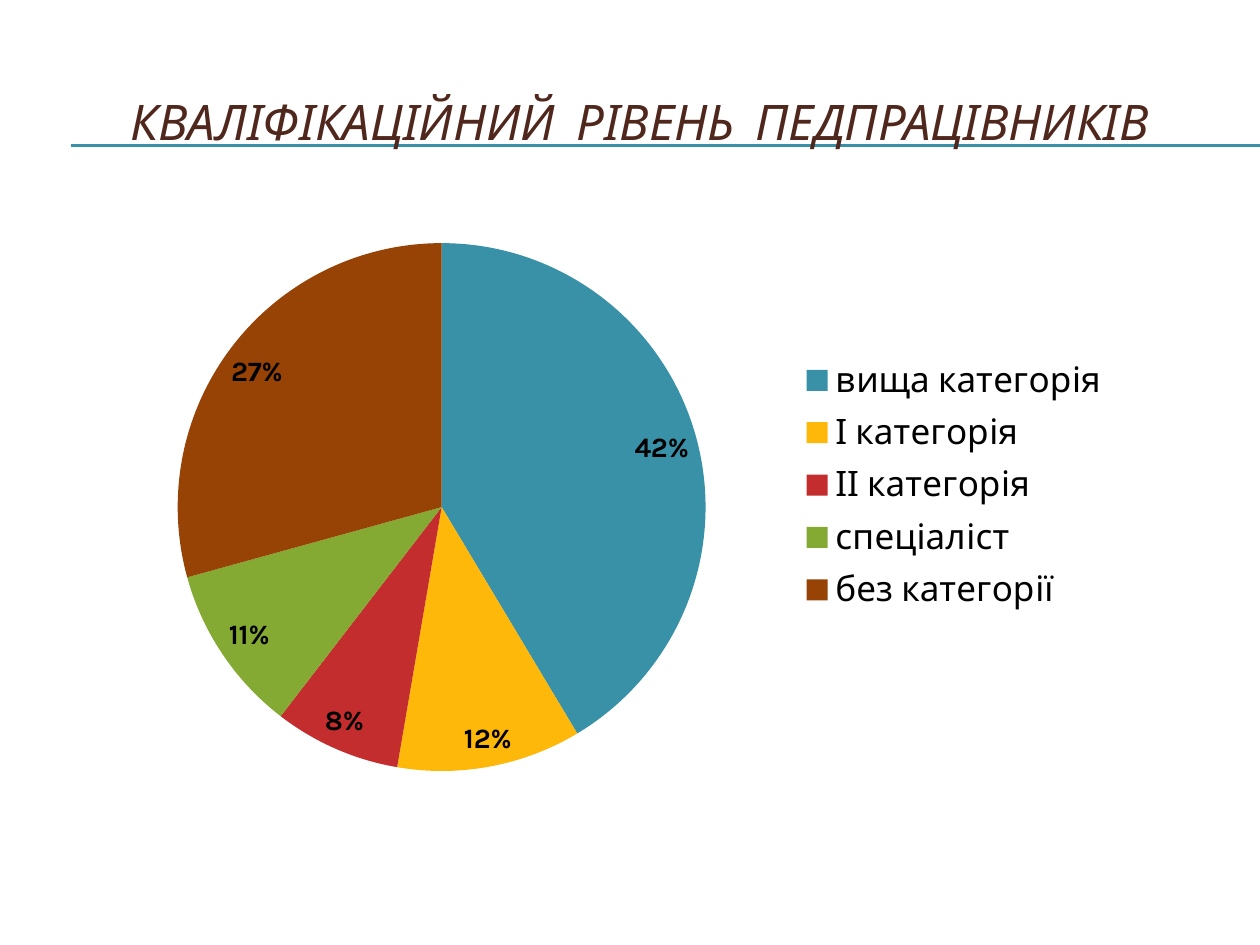
from lxml import etree
from pptx import Presentation
from pptx.chart.data import CategoryChartData
from pptx.dml.color import RGBColor
from pptx.enum import chart as ch, shapes, text
from pptx.oxml.ns import qn
from pptx.util import Inches, Pt

FONT = "Karla"
COLORS = {"rule": "3891A7", "title": "4F271C", "text": "000000"}
CHART_W, CHART_H = 8.2, 4.69
LEVELS = [
    ("вища категорія", 246, "42%", "3891A7", (0, -0.05)),
    ("І категорія", 67, "12%", "FEB80A", (0.18, -0.03)),
    ("ІІ категорія", 46, "8%", "C32D2E", (-0.11, -0.04)),
    ("спеціаліст", 61, "11%", "84AA33", (0, 0.01)),
    ("без категорії", 174, "27%", "964305", (-0.05, 0.04)),
]


def style(font, size, color, bold=False, italic=False):
    font.name = FONT
    font.size = Pt(size)
    font.bold = bold
    font.italic = italic
    font.color.rgb = RGBColor.from_string(color)


def place(parent, index, modes, x, y, w=None, h=None):
    for old in parent.findall(qn("c:layout")):
        parent.remove(old)
    layout = etree.Element(qn("c:layout"))
    manual = etree.SubElement(layout, qn("c:manualLayout"))
    for tag, value in modes:
        etree.SubElement(manual, qn(f"c:{tag}")).set("val", value)
    for tag, length, whole in (("x", x, CHART_W), ("y", y, CHART_H),
                               ("w", w, CHART_W), ("h", h, CHART_H)):
        if length is not None:
            etree.SubElement(manual, qn(f"c:{tag}")).set("val", f"{length / whole:.4f}")
    parent.insert(index, layout)


prs = Presentation()
prs.slide_width, prs.slide_height = Inches(10), Inches(7.5)
slide = prs.slides.add_slide(prs.slide_layouts[5])

heading = slide.shapes.title
heading.left, heading.top = Inches(0.33), Inches(0.5)
heading.width, heading.height = Inches(9.5), Inches(0.92)
frame = heading.text_frame
frame.text = "КВАЛІФІКАЦІЙНИЙ  РІВЕНЬ  ПЕДПРАЦІВНИКІВ"
frame.vertical_anchor = text.MSO_ANCHOR.MIDDLE
frame.auto_size = text.MSO_AUTO_SIZE.NONE
frame.paragraphs[0].alignment = text.PP_ALIGN.CENTER
style(frame.paragraphs[0].font, 28, COLORS["title"], italic=True)

for y in (1.15, 1.16):
    rule = slide.shapes.add_connector(
        shapes.MSO_CONNECTOR.STRAIGHT, Inches(0.56), Inches(y), Inches(10), Inches(y))
    rule.line.color.rgb = RGBColor.from_string(COLORS["rule"])
    rule.line.width = Pt(0.75)
    etree.SubElement(rule._element.spPr, qn("a:effectLst"))
    heading._element.addprevious(rule._element)

staff = CategoryChartData()
staff.categories = [name for name, *_ in LEVELS]
staff.add_series("Series 1", [count for _, count, *_ in LEVELS])
pie = slide.shapes.add_chart(
    ch.XL_CHART_TYPE.PIE, Inches(0.7), Inches(1.8),
    Inches(CHART_W), Inches(CHART_H), staff).chart
style(pie.font, 16, COLORS["text"])
pie.has_title = False
pie.has_legend = True
pie.legend.position = ch.XL_LEGEND_POSITION.RIGHT
pie.legend.include_in_layout = False
style(pie.legend.font, 20, COLORS["text"])

edges = [("xMode", "edge"), ("yMode", "edge")]
place(pie._chartSpace.chart.plotArea, 0, [("layoutTarget", "inner")] + edges,
      0.71, 0.13, 4.19, 4.19)
place(pie.legend._element, 1, edges, 5.62, 0.97, 2.5, 2.16)

pie.plots[0].vary_by_categories = True
levels = pie.plots[0].series[0]
shares = levels.data_labels
shares.show_value = True
shares.position = ch.XL_LABEL_POSITION.INSIDE_END
style(shares.font, 16, COLORS["text"], bold=True)

for i, (_, _, share, color, shift) in enumerate(LEVELS):
    point = levels.points[i]
    point.format.fill.solid()
    point.format.fill.fore_color.rgb = RGBColor.from_string(color)
    label = point.data_label
    label.text_frame.text = share
    style(label.text_frame.paragraphs[0].runs[0].font, 16, COLORS["text"], bold=True)
    label.position = ch.XL_LABEL_POSITION.INSIDE_END
    place(shares._element.findall(qn("c:dLbl"))[i], 1, [], *shift)

prs.save("out.pptx")
